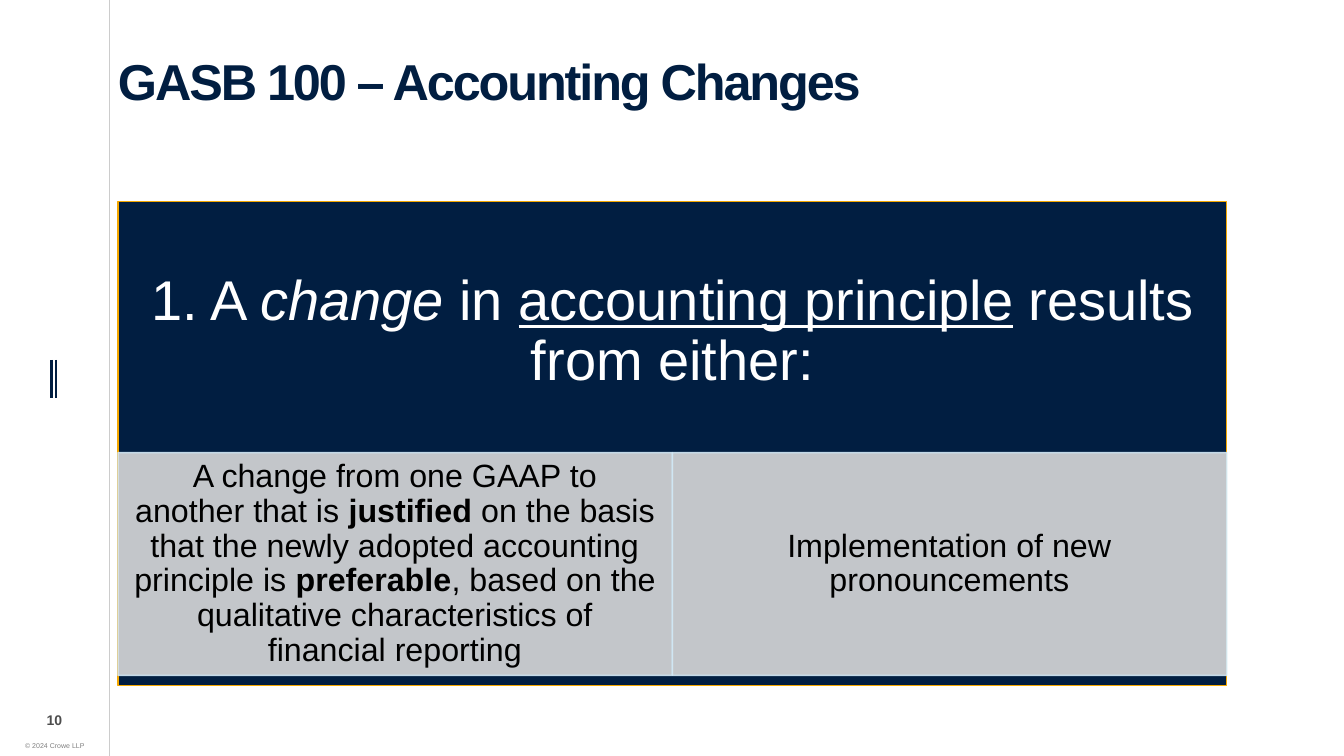
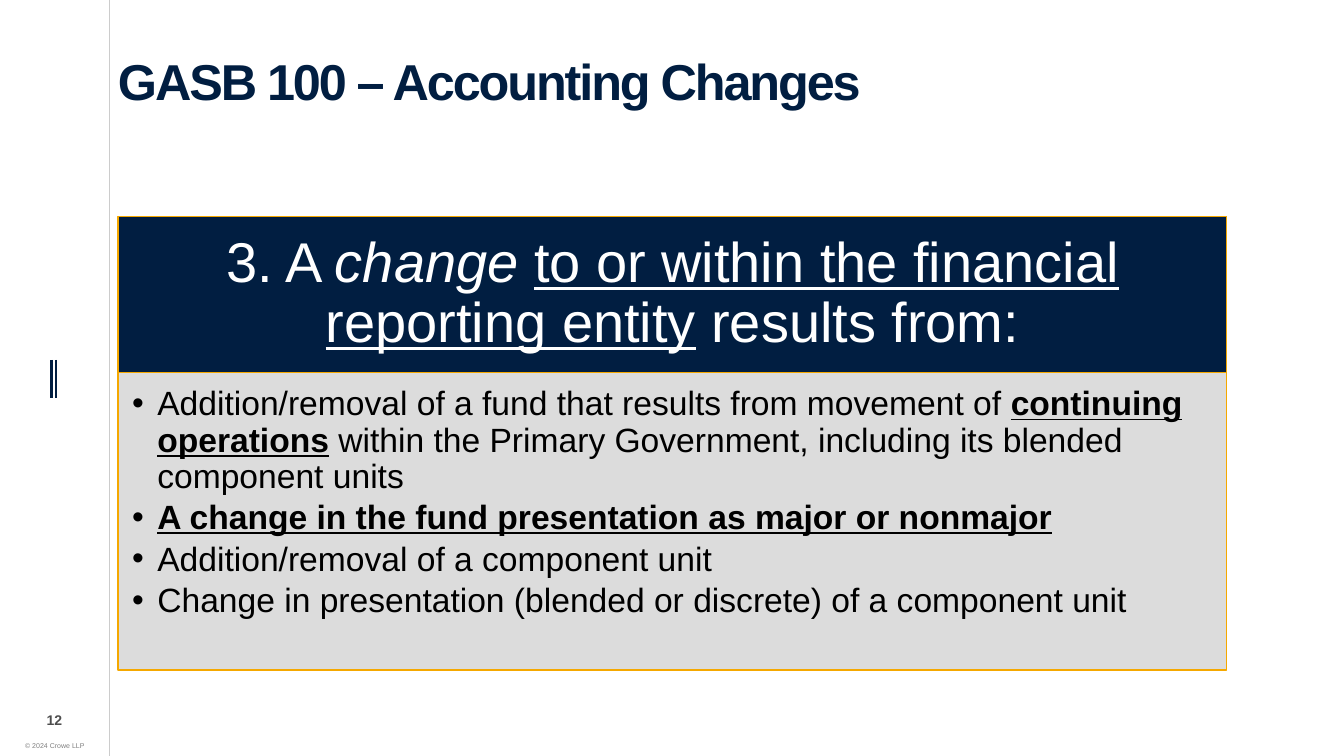
"""Build two slides on accounting changes under GASB 100."""
from dataclasses import dataclass
from typing import Any

from lxml import etree
from pptx import Presentation
from pptx.dml.color import RGBColor
from pptx.enum.shapes import MSO_CONNECTOR, MSO_SHAPE
from pptx.enum.text import MSO_ANCHOR, MSO_AUTO_SIZE, PP_ALIGN
from pptx.oxml.ns import qn
from pptx.util import Inches, Pt

LEFT, MID = PP_ALIGN.LEFT, PP_ALIGN.CENTER
TOP, HALF = MSO_ANCHOR.TOP, MSO_ANCHOR.MIDDLE
RECT, LINE = MSO_SHAPE.RECTANGLE, MSO_CONNECTOR.STRAIGHT
FIXED = MSO_AUTO_SIZE.NONE

WIDE, HIGH = Inches(13.333), Inches(7.5)
NAVY, GOLD, GREY, PALE = "011E41", "F5A800", "D9D9D9", "D1E8F6"
BLACK, WHITE, DIM, DARK, FAINT = "000000", "FFFFFF", "808080", "4D4D4D", "CCCCCC"
SIDE, SPAN = 8.78, 82.5
HEAD = "GASB 100 – Accounting Changes"
STYLES = {"b": "bold", "i": "italic", "u": "underline"}


@dataclass(frozen=True)
class Box:
    """Hold a place as percent shares of the slide."""
    x: float
    y: float
    w: float
    h: float

    def place(self) -> dict[str, int]:
        """Return the place in slide units."""
        return {"left": round(WIDE * self.x / 100), "top": round(HIGH * self.y / 100),
                "width": round(WIDE * self.w / 100), "height": round(HIGH * self.h / 100)}


@dataclass(frozen=True)
class Bit:
    """Hold a run of text and its style letters."""
    text: str
    style: str = ""


@dataclass(frozen=True)
class Look:
    """Hold the text format of a box."""
    size: float
    ink: str
    ins: tuple[float, float, float, float] = (0, 0, 0, 0)
    align: Any = MID
    anchor: Any = HALF
    lead: float = 1.0
    style: str = ""
    track: int = 0
    dot: bool = False
    wrap: bool = True


@dataclass(frozen=True)
class Skin:
    """Hold the fill, line and opacity of a panel."""
    fill: str
    line: str
    solid: int = 100
    edge: int = 100


@dataclass(frozen=True)
class Panel:
    """Hold one filled box with its text."""
    box: Box
    skin: Skin
    look: Look
    text: tuple[tuple[Bit, ...], ...]


@dataclass(frozen=True)
class Page:
    """Hold the number and panels of a slide."""
    num: str
    panels: tuple[Panel, ...]


RULES = (Box(3.83, 47.6, 0, 5.07), Box(4.2, 47.6, 0, 5.07))
SPLIT = Box(8.1, 0, 0, 100)
TITLE = Look(36, NAVY, (0, 0.21, 0, 0), LEFT, TOP, 0.8, "b", -150)
NOTE = Look(5, DIM, (0.1, 0.05, 0.1, 0.05), anchor=TOP, wrap=False)
COUNT = Look(10, DARK, style="b")
CELL = Look(23, BLACK, (0.16, 0.03, 0.16, 0.03), lead=0.9)
LIST = Look(24, BLACK, (0.14, 0.14, 0.19, 0.21), LEFT, TOP, 0.9, dot=True)
BAND = Skin(NAVY, GOLD)
TINT = Skin(GREY, PALE, 90, 90)

CAUSES = (
    (Bit("A change from one GAAP to another that is "), Bit("justified", "b"),
     Bit(" on the basis that the newly adopted accounting principle is "),
     Bit("preferable", "b"),
     Bit(", based on the qualitative characteristics of financial reporting")),
    (Bit("Implementation of new pronouncements"),),
)
PAGES = (
    Page("10", (
        Panel(Box(SIDE, 26.67, SPAN, 64), BAND,
              Look(40, WHITE, (0.31, 0.31, 0.31, 2.52), lead=0.9),
              ((Bit("1. A "), Bit("change", "i"), Bit(" in "),
                Bit("accounting principle", "u"), Bit(" results from either:")),)),
        *(Panel(Box(SIDE + n * SPAN / 2, 59.87, SPAN / 2, 29.47), TINT, CELL, (cause,))
          for n, cause in enumerate(CAUSES)),
    )),
    Page("12", (
        Panel(Box(SIDE, 28.6, SPAN, 20.7), BAND,
              Look(40, WHITE, (0.31, 0.18, 0.31, 0.18), lead=0.9),
              ((Bit("3. A "), Bit("change ", "i"),
                Bit("to or within the financial reporting entity", "u"),
                Bit(" results from:")),)),
        Panel(Box(SIDE, 49.3, SPAN, 39.33), Skin(GREY, GOLD, 90), LIST, (
            (Bit("Addition/removal of a fund that results from movement of "),
             Bit("continuing operations", "bu"),
             Bit(" within the Primary Government, including its blended component units")),
            (Bit("A change in the fund presentation as major or nonmajor", "bu"),),
            (Bit("Addition/removal of a component unit"),),
            (Bit("Change in presentation (blended or discrete) of a component unit"),),
        )),
    )),
)


def put(thing: Any, vals: dict[str, Any]) -> None:
    """Set each named value on an object."""
    for name, val in vals.items():
        setattr(thing, name, val)


def tint(fill: Any, ink: str) -> None:
    """Fill with a solid colour given as hex."""
    fill.solid()
    fill.fore_color.rgb = RGBColor.from_string(ink)


def fade(shape: Any, where: str, share: int) -> None:
    """Set the opacity of a colour in the shape."""
    if share < 100:
        for node in shape.element.xpath(f"p:spPr/{where}/a:srgbClr"):
            etree.SubElement(node, qn("a:alpha"), val=str(share * 1000))


def dot(para: Any) -> None:
    """Give a paragraph a hanging bullet."""
    para.level = 1
    props = para._p.get_or_add_pPr()
    for name, val in (("marL", Inches(0.25)), ("indent", -Inches(0.25))):
        props.set(name, str(val))
    etree.SubElement(props, qn("a:buFont"), typeface="Arial")
    etree.SubElement(props, qn("a:buChar"), char="•")


def write(shape: Any, look: Look, text: tuple[tuple[Bit, ...], ...]) -> None:
    """Write formatted paragraphs into a shape."""
    frame = shape.text_frame
    sides = ("margin_left", "margin_top", "margin_right", "margin_bottom")
    put(frame, {"word_wrap": look.wrap, "auto_size": FIXED, "vertical_anchor": look.anchor,
                **{side: Inches(gap) for side, gap in zip(sides, look.ins)}})
    for n, bits in enumerate(text):
        para = frame.add_paragraph() if n else frame.paragraphs[0]
        if look.dot:
            dot(para)
        put(para, {"alignment": look.align, "line_spacing": look.lead,
                   "space_before": Pt(0), "space_after": Pt(3.6 if look.dot else 0)})
        for bit in bits:
            run = para.add_run()
            run.text = bit.text
            put(run.font, {"name": "Arial", "size": Pt(look.size),
                           **{name: key in look.style + bit.style
                              for key, name in STYLES.items()}})
            tint(run.font.fill, look.ink)
            if look.track:
                run._r.get_or_add_rPr().set("spc", str(look.track))


def rule(slide: Any, box: Box, ink: str, width: float) -> None:
    """Draw an upright line."""
    at = box.place()
    line = slide.shapes.add_connector(LINE, at["left"], at["top"],
                                      at["left"], at["top"] + at["height"])
    tint(line.line.fill, ink)
    line.line.width = Pt(width)
    etree.SubElement(line.element.spPr, qn("a:effectLst"))


def label(slide: Any, box: Box, look: Look, text: str) -> None:
    """Add a plain text box."""
    write(slide.shapes.add_textbox(**box.place()), look, ((Bit(text),),))


def panel(slide: Any, item: Panel) -> None:
    """Draw a panel, in the body placeholder if it is a list."""
    if item.look.dot:
        shape = slide.placeholders[1]
        put(shape, item.box.place())
    else:
        shape = slide.shapes.add_shape(RECT, **item.box.place())
        shape.shadow.inherit = False
    tint(shape.fill, item.skin.fill)
    tint(shape.line.fill, item.skin.line)
    shape.line.width = Pt(1)
    fade(shape, "a:solidFill", item.skin.solid)
    fade(shape, "a:ln/a:solidFill", item.skin.edge)
    write(shape, item.look, item.text)


def frame(slide: Any, num: str) -> None:
    """Draw what all slides share."""
    for box in RULES:
        rule(slide, box, NAVY, 1.5)
    rule(slide, SPLIT, FAINT, 0.5)
    label(slide, Box(1.05, 97.47, 6.08, 2.53), NOTE, "© 2024 Crowe LLP")
    label(slide, Box(1.95, 93.6, 4.2, 3.33), COUNT, num)
    put(slide.shapes.title, Box(SIDE, 5.33, SPAN, 20).place())
    write(slide.shapes.title, TITLE, ((Bit(HEAD),),))


def main() -> None:
    """Build and save the deck."""
    deck = Presentation()
    put(deck, {"slide_width": WIDE, "slide_height": HIGH})
    for page in PAGES:
        listed = any(item.look.dot for item in page.panels)
        slide = deck.slides.add_slide(deck.slide_layouts[1 if listed else 5])
        tint(slide.background.fill, WHITE)
        frame(slide, page.num)
        for item in page.panels:
            panel(slide, item)
    deck.save("out.pptx")


if __name__ == "__main__":
    main()
